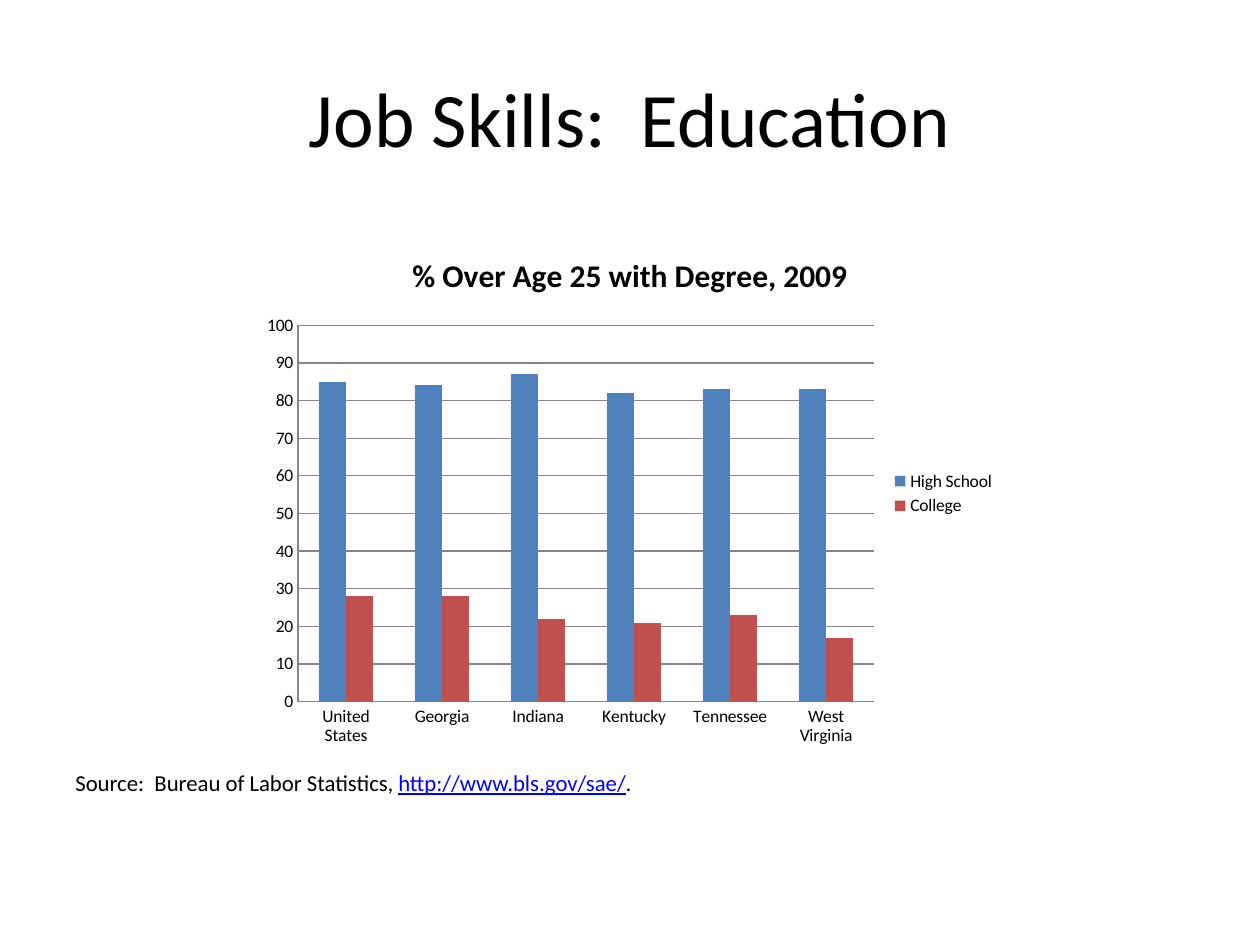
from dataclasses import dataclass

from lxml import etree
from pptx import Presentation
from pptx.chart.data import CategoryChartData
from pptx.dml.color import RGBColor
from pptx.enum.chart import XL_CHART_TYPE, XL_LEGEND_POSITION, XL_TICK_MARK
from pptx.enum.text import MSO_ANCHOR, PP_ALIGN
from pptx.util import Cm, Pt

COLUMNS = XL_CHART_TYPE.COLUMN_CLUSTERED
LEGEND_RIGHT = XL_LEGEND_POSITION.RIGHT
NO_TICK = XL_TICK_MARK.NONE
MIDDLE = MSO_ANCHOR.MIDDLE
LEFT, CENTER = PP_ALIGN.LEFT, PP_ALIGN.CENTER


@dataclass(frozen=True)
class Theme:
    """Colours, font and type sizes of the slide."""
    font: str = "Calibri"
    ink: RGBColor = RGBColor(0, 0, 0)
    link: RGBColor = RGBColor(0, 0, 255)
    axis: RGBColor = RGBColor(0x86, 0x86, 0x86)
    series: tuple = (RGBColor(0x4F, 0x81, 0xBD), RGBColor(0xC0, 0x50, 0x4D))
    heading: Pt = Pt(44)
    chart_heading: Pt = Pt(18)
    source: Pt = Pt(13)
    label: Pt = Pt(10)


THEME = Theme()
STATES = ("United States", "Georgia", "Indiana", "Kentucky", "Tennessee", "West Virginia")
DEGREES = {
    "High School": (85, 84, 87, 82, 83, 83),
    "College": (28, 28, 22, 21, 23, 17),
}


def style_font(font, size, color=THEME.ink, bold=False):
    """Apply the theme font with a size, colour and weight."""
    font.name, font.size, font.bold = THEME.font, size, bold
    font.color.rgb = color


def add_line(slide, box, parts, size, align):
    """Write one line of (text, is_link) parts in the given box."""
    frame = slide.shapes.add_textbox(*box).text_frame
    frame.word_wrap = True
    frame.vertical_anchor = MIDDLE
    line = frame.paragraphs[0]
    line.alignment = align
    for text, is_link in parts:
        run = line.add_run()
        run.text = text
        style_font(run.font, size, THEME.link if is_link else THEME.ink)
        run.font.underline = is_link


def add_degree_chart(slide, box):
    """Draw the share of adults with each degree by state."""
    data = CategoryChartData()
    data.categories = STATES
    for degree, shares in DEGREES.items():
        data.add_series(degree, shares)
    chart = slide.shapes.add_chart(COLUMNS, *box, data).chart
    style_font(chart.font, THEME.label)

    chart.has_title = True
    heading = chart.chart_title.text_frame
    heading.text = "% Over Age 25 with Degree, 2009"
    style_font(heading.paragraphs[0].runs[0].font, THEME.chart_heading, bold=True)
    chart.chart_title.include_in_layout = False

    chart.has_legend = True
    chart.legend.position = LEGEND_RIGHT
    chart.legend.include_in_layout = False

    for axis in (chart.category_axis, chart.value_axis):
        axis.major_tick_mark = axis.minor_tick_mark = NO_TICK
        axis.format.line.color.rgb = THEME.axis
    shares_axis = chart.value_axis
    shares_axis.minimum_scale, shares_axis.maximum_scale = 0, 100
    shares_axis.major_unit = 10
    shares_axis.has_major_gridlines = True
    shares_axis.major_gridlines.format.line.color.rgb = THEME.axis

    plot = chart.plots[0]
    plot.gap_width, plot.overlap = 150, 0
    plot.vary_by_categories = False
    for degree, color in zip(plot.series, THEME.series):
        degree.format.fill.solid()
        degree.format.fill.fore_color.rgb = color


def main():
    """Build and save the education slide."""
    deck = Presentation()
    deck.slide_width, deck.slide_height = Cm(25.4), Cm(19.05)
    slide = deck.slides.add_slide(deck.slide_layouts[6])
    margin = Cm(1.27)
    content_width = deck.slide_width - 2 * margin
    add_line(slide, (margin, Cm(0.76), content_width, Cm(3.18)),
             [("Job Skills:  Education", False)], THEME.heading, CENTER)
    add_line(slide, (margin, Cm(15.25), content_width, Cm(1.05)),
             [("Source:  Bureau of Labor Statistics, ", False),
              ("http://www.bls.gov/sae/", True), (".", False)],
             THEME.source, LEFT)
    add_degree_chart(slide, (Cm(5.08), Cm(4.65), Cm(15.24), Cm(10.6)))
    deck.save("out.pptx")


if __name__ == "__main__":
    main()
